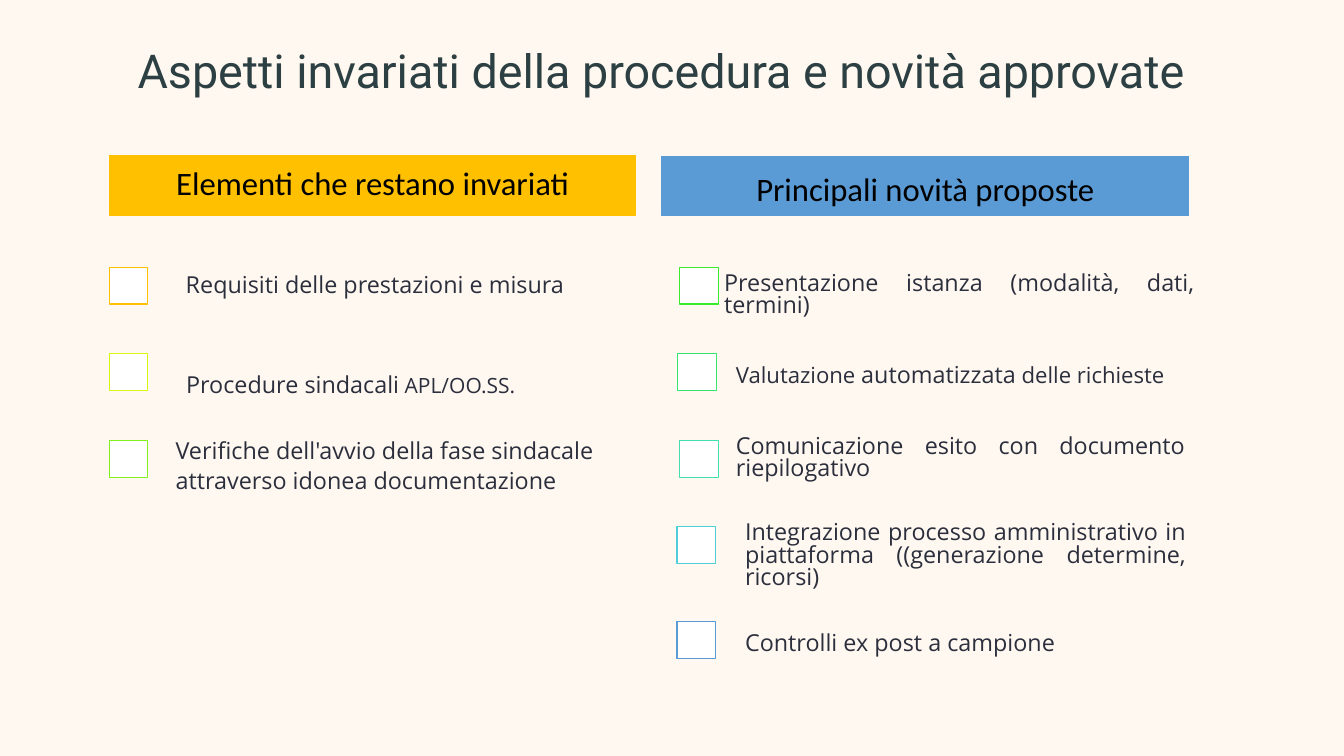
from pptx import Presentation
from pptx.dml.color import RGBColor
from pptx.enum.shapes import MSO_SHAPE as SHAPE
from pptx.enum.text import MSO_ANCHOR as ANCHOR, MSO_AUTO_SIZE as AUTO, PP_ALIGN as ALIGN
from pptx.util import Inches, Pt

COLORS = {
    "background": "FFF8F0", "title": "2C3F42", "text": "2B2E3C",
    "black": "000000", "white": "FFFFFF", "amber": "FFC000",
    "yellow": "D7F80E", "lime": "80F11C", "green": "39EB29",
    "emerald": "36E56C", "teal": "43DFB0", "cyan": "4FCEDA", "blue": "5B9BD5",
}
ROW_STEP = 1.03
CHECK_W, CHECK_H = 0.46, 0.44

UNCHANGED = [
    dict(color="amber", label=(0.25, -0.29, 5.83), align=ALIGN.CENTER,
         paras=[[("Requisiti delle prestazioni e misura", 20)]]),
    dict(color="yellow", label=(0.2, -0.13, 5.35), align=ALIGN.CENTER,
         paras=[[("Procedure sindacali", 20), (" APL/OO.SS.", 18)]]),
    dict(color="lime", label=(0.65, -0.2, 5.83),
         paras=[[("Verifiche dell'avvio della fase sindacale", 20)],
                [("attraverso idonea documentazione", 20)]]),
]
NEW = [
    dict(color="green", check=0.21, label=(0.6, -0.17, 5.88),
         align=ALIGN.JUSTIFY, spacing=0.8,
         paras=[[("Presentazione istanza (modalità, dati, termini)", 20)]]),
    dict(color="emerald", check=0.19, label=(0.74, -0.25, 5.88),
         paras=[[("Valutazione ", 19), ("automatizzata", 20),
                 (" delle richieste", 19)]]),
    dict(color="teal", check=0.21, label=(0.74, -0.29, 5.63),
         align=ALIGN.JUSTIFY, spacing=0.8,
         paras=[[("Comunicazione esito con documento riepilogativo", 20)]]),
    dict(color="cyan", check=0.18, label=(0.85, -0.16, 5.53),
         align=ALIGN.JUSTIFY, spacing=0.8,
         paras=[[("Integrazione processo amministrativo in piattaforma "
                  "((generazione determine, ricorsi)", 20)]]),
    dict(color="blue", check=0.18, drop=0.1, label=(0.85, -0.25, 5.53),
         paras=[[("Controlli ex post a campione", 20)]]),
]


def rgb(name):
    return RGBColor.from_string(COLORS[name])


def write(tf, paras, font="Open Sans", color="text", align=ALIGN.LEFT,
          spacing=0.9, after=4, anchor=ANCHOR.MIDDLE, wrap=True,
          margins=(0.14, 0.14, 0.14, 0.14)):
    tf.auto_size = AUTO.NONE
    tf.word_wrap = wrap
    tf.vertical_anchor = anchor
    (tf.margin_left, tf.margin_top,
     tf.margin_right, tf.margin_bottom) = map(Inches, margins)
    for i, runs in enumerate(paras):
        p = tf.add_paragraph() if i else tf.paragraphs[0]
        p.alignment = align
        p.line_spacing = spacing
        p.space_before = Pt(0)
        p.space_after = Pt(after if i < len(paras) - 1 else 0)
        for text, size in runs:
            r = p.add_run()
            r.text = text
            r.font.name = font
            r.font.size = Pt(size)
            r.font.color.rgb = rgb(color)


def add_rect(s, x, y, w, h, fill, line):
    sp = s.shapes.add_shape(SHAPE.RECTANGLE, *map(Inches, (x, y, w, h)))
    sp.shadow.inherit = False
    sp.fill.solid()
    sp.fill.fore_color.rgb = rgb(fill)
    sp.line.color.rgb = rgb(line)
    sp.line.width = Pt(1)
    return sp


def add_title(s, text, x, y, w, h):
    sp = s.shapes.title
    sp.left, sp.top, sp.width, sp.height = map(Inches, (x, y, w, h))
    write(sp.text_frame, [[(text, 40)]], font="Roboto", color="title",
          align=ALIGN.CENTER, spacing=Pt(55.5), anchor=ANCHOR.TOP,
          wrap=False, margins=(0, 0, 0, 0))


def add_check_row(s, x, y, color, label, paras, check=0, drop=0, **fmt):
    add_rect(s, x + check, y + drop, CHECK_W, CHECK_H, "white", color)
    dx, dy, w = label
    box = (x + dx, y + drop + dy, w, ROW_STEP)
    tb = s.shapes.add_textbox(*map(Inches, box))
    write(tb.text_frame, paras, **fmt)


def add_column(s, x, y, w, h, heading, color, rows, first_row, text_drop=0):
    bar = add_rect(s, x, y, w, h, color, color)
    write(bar.text_frame, [[(heading, 28)]], font="Calibri", color="black",
          align=ALIGN.CENTER, margins=(0.06, 0.04 + text_drop, 0.06, 0.04))
    for i, row in enumerate(rows):
        add_check_row(s, x, first_row + i * ROW_STEP, **row)


def main():
    prs = Presentation()
    prs.slide_width, prs.slide_height = Inches(16), Inches(9)
    s = prs.slides.add_slide(prs.slide_layouts[5])
    s.background.fill.solid()
    s.background.fill.fore_color.rgb = rgb("background")
    add_title(s, "Aspetti invariati della procedura e novità approvate",
              0.99, 0.39, 13.76, 0.76)
    add_column(s, 1.3, 1.85, 6.27, 0.71, "Elementi che restano invariati",
               "amber", UNCHANGED, 3.18)
    add_column(s, 7.88, 1.86, 6.27, 0.71, "Principali novità proposte",
               "blue", NEW, 3.18, text_drop=0.11)
    prs.save("out.pptx")


if __name__ == "__main__":
    main()
